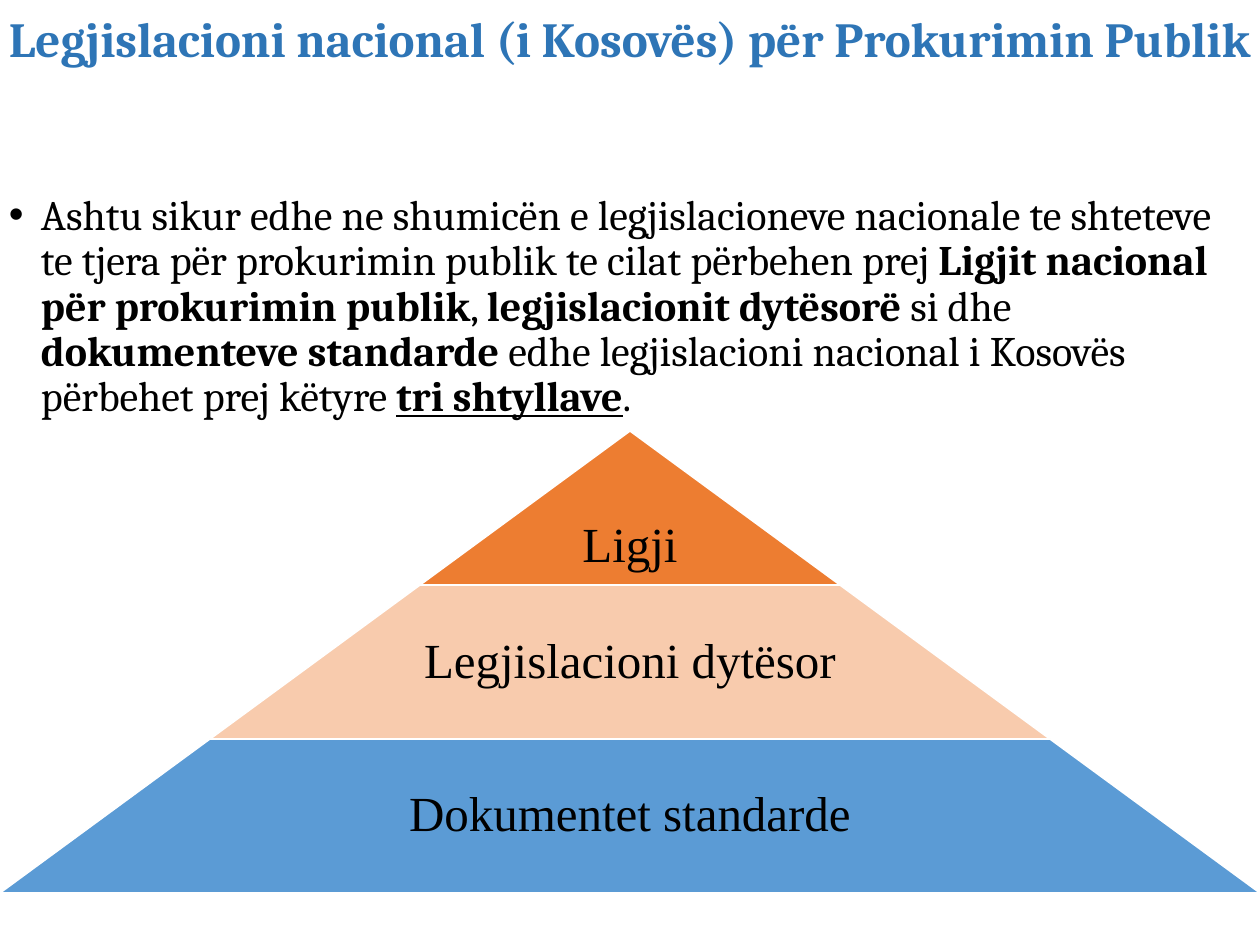
from pptx import Presentation
from pptx.dml.color import RGBColor
from pptx.enum.shapes import MSO_SHAPE
from pptx.enum.text import MSO_ANCHOR, PP_ALIGN
from pptx.oxml.ns import qn
from pptx.util import Emu, Pt
from lxml.etree import SubElement

PX = 914400 / 126


def px(length):
    """Turn whole pixels into EMU."""
    return Emu(round(length * PX))


def write(paragraph, text, size, color, font="Cambria", bold=False, underline=False):
    run = paragraph.add_run()
    run.text = text
    run.font.name = font
    run.font.size = Pt(size)
    run.font.bold = bold
    run.font.underline = underline
    run.font.color.rgb = RGBColor.from_string(color)
    paragraph.line_spacing = 0.9
    paragraph.space_before = Pt(0)


presentation = Presentation()
presentation.slide_width, presentation.slide_height = px(1260), px(945)
slide = presentation.slides.add_slide(presentation.slide_layouts[1])
title, body = slide.placeholders

for placeholder, top, height in ((title, 10, 95), (body, 189, 703)):
    placeholder.left, placeholder.top = px(0), px(top)
    placeholder.width, placeholder.height = px(1260), px(height)
    frame = placeholder.text_frame
    frame.word_wrap = True
    frame.vertical_anchor = MSO_ANCHOR.TOP
    frame.margin_left = frame.margin_right = px(9)
    frame.margin_top = frame.margin_bottom = px(5)
    frame.paragraphs[0].alignment = PP_ALIGN.LEFT

write(title.text_frame.paragraphs[0],
      "Legjislacioni nacional (i Kosovës) për Prokurimin Publik",
      28, "2E75B6", bold=True)

paragraph = body.text_frame.paragraphs[0]
properties = paragraph._p.get_or_add_pPr()
properties.set("marL", str(px(32)))
properties.set("indent", str(px(-32)))
SubElement(properties, qn("a:buFont")).set("typeface", "Arial")
SubElement(properties, qn("a:buChar")).set("char", "•")
body_runs = [
    ("Ashtu sikur edhe ne shumicën e legjislacioneve nacionale te shteteve "
     "te tjera për prokurimin publik te cilat përbehen prej ", {}),
    ("Ligjit nacional për prokurimin publik", {"bold": True}),
    (", ", {}),
    ("legjislacionit dytësorë", {"bold": True}),
    (" si dhe ", {}),
    ("dokumenteve standarde ", {"bold": True}),
    ("edhe legjislacioni nacional i Kosovës përbehet prej këtyre ", {}),
    ("tri shtyllave", {"bold": True, "underline": True}),
    (".", {}),
]
for text, style in body_runs:
    write(paragraph, text, 24, "000000", **style)

# Each tier is one step wider on both sides than the tier above it.
STEP, TIER_HEIGHT, PYRAMID_TOP = 210, 154, 431
tiers = [("Ligji", "ED7D31"), ("Legjislacioni dytësor", "F8CBAD"),
         ("Dokumentet standarde", "5B9BD5")]
for level, (label, color) in enumerate(tiers, start=1):
    tier = slide.shapes.add_shape(
        MSO_SHAPE.TRAPEZOID, px(630 - level * STEP),
        px(PYRAMID_TOP + (level - 1) * TIER_HEIGHT),
        px(2 * level * STEP), px(TIER_HEIGHT))
    tier.adjustments[0] = STEP / TIER_HEIGHT
    tier.shadow.inherit = False
    tier.fill.solid()
    tier.fill.fore_color.rgb = RGBColor.from_string(color)
    tier.line.color.rgb = RGBColor.from_string("FFFFFF")
    tier.line.width = Pt(1)
    frame = tier.text_frame
    frame.word_wrap = True
    frame.margin_left = frame.margin_right = frame.margin_top = px(5)
    if level == 1:
        frame.vertical_anchor = MSO_ANCHOR.BOTTOM
        frame.margin_bottom = px(12)
    else:
        # Balances the trapezoid's own text inset at the top.
        frame.vertical_anchor = MSO_ANCHOR.MIDDLE
        frame.margin_bottom = px(5 + TIER_HEIGHT // (3 * level))
    frame.paragraphs[0].alignment = PP_ALIGN.CENTER
    write(frame.paragraphs[0], label, 28, "000000", font="Times New Roman")

presentation.save("out.pptx")
